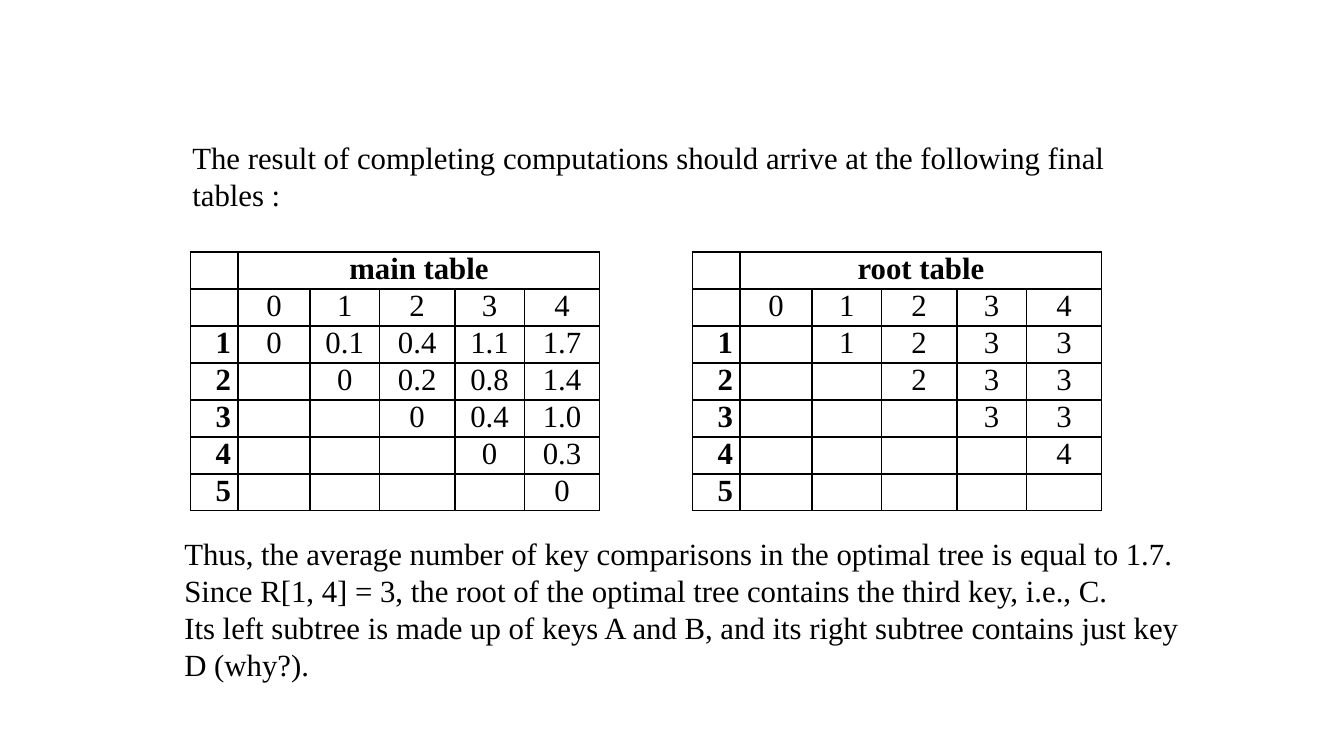
from dataclasses import dataclass

import lxml.etree
import pptx
import pptx.dml.color
import pptx.enum.text
import pptx.oxml
import pptx.oxml.ns
import pptx.util

Pt = pptx.util.Pt
ALIGN = pptx.enum.text.PP_ALIGN
BLACK, WHITE = "000000", "FFFFFF"
TEXT_FORMAT = {"name": "Times New Roman", "size": Pt(22)}
CELL_FORMAT = {
    "margin_left": Pt(5),
    "margin_right": Pt(5),
    "margin_top": Pt(0),
    "margin_bottom": Pt(0),
}
COLUMN_WIDTHS = (34, 51.5, 49.5, 54, 49.5, 54)
ROW_HEIGHT = 26.4
TABLE_TOP = 180
KEY_HEADINGS = ["0", "1", "2", "3", "4"]


@dataclass
class Passage:
    left: float
    top: float
    width: float
    height: float
    paragraphs: list[str]


@dataclass
class KeyTable:
    left: float
    title: str
    triangle: list[list[str]]


PASSAGES = [
    Passage(130.3, 95.8, 711.4, 60.5, [
        "The result of completing computations should arrive at the following final tables :",
    ]),
    Passage(124.6, 378.7, 740.9, 113.8, [
        "Thus, the average number of key comparisons in the optimal tree is equal to 1.7. "
        "Since R[1, 4] = 3, the root of the optimal tree contains the third key, i.e., C.",
        "Its left subtree is made up of keys A and B, and its right subtree contains "
        "just key D (why?).",
    ]),
]
KEY_TABLES = [
    KeyTable(136, "main table", [
        ["0", "0.1", "0.4", "1.1", "1.7"],
        ["0", "0.2", "0.8", "1.4"],
        ["0", "0.4", "1.0"],
        ["0", "0.3"],
        ["0"],
    ]),
    KeyTable(494.6, "root table", [
        ["1", "2", "3", "3"],
        ["2", "3", "3"],
        ["3", "3"],
        ["4"],
        [],
    ]),
]


def color(value: str) -> pptx.dml.color.RGBColor:
    return pptx.dml.color.RGBColor.from_string(value)


def apply_format(target, values: dict) -> None:
    for attribute, value in values.items():
        setattr(target, attribute, value)


def write(paragraph, text: str, bold: bool = False) -> None:
    run = paragraph.add_run()
    run.text = text
    apply_format(run.font, TEXT_FORMAT | {"bold": bold})
    run.font.color.rgb = color(BLACK)


def draw_borders(cell) -> None:
    properties = cell._tc.get_or_add_tcPr()
    for side in ("lnL", "lnR", "lnT", "lnB"):
        line = lxml.etree.SubElement(properties, pptx.oxml.ns.qn(f"a:{side}"), w=str(Pt(1)))
        fill = lxml.etree.SubElement(line, pptx.oxml.ns.qn("a:solidFill"))
        lxml.etree.SubElement(fill, pptx.oxml.ns.qn("a:srgbClr"), val=BLACK)


def draw_passage(slide, passage: Passage) -> None:
    box = slide.shapes.add_textbox(
        Pt(passage.left), Pt(passage.top), Pt(passage.width), Pt(passage.height)
    )
    frame = box.text_frame
    apply_format(frame, {
        "word_wrap": True,
        "auto_size": pptx.enum.text.MSO_AUTO_SIZE.SHAPE_TO_FIT_TEXT,
    })
    for index, text in enumerate(passage.paragraphs):
        write(frame.add_paragraph() if index else frame.paragraphs[0], text)


def table_rows(key_table: KeyTable) -> list[list[str]]:
    rows = [["", key_table.title, "", "", "", ""], ["", *KEY_HEADINGS]]
    for number, values in enumerate(key_table.triangle, 1):
        padding = [""] * (len(KEY_HEADINGS) - len(values))
        rows.append([str(number), *padding, *values])
    return rows


def draw_key_table(slide, key_table: KeyTable) -> None:
    rows = table_rows(key_table)
    grid = slide.shapes.add_table(
        len(rows), len(COLUMN_WIDTHS), Pt(key_table.left), Pt(TABLE_TOP),
        Pt(sum(COLUMN_WIDTHS)), Pt(ROW_HEIGHT * len(rows)),
    ).table
    apply_format(grid, {"first_row": False, "horz_banding": False})
    for column, width in zip(grid.columns, COLUMN_WIDTHS):
        column.width = Pt(width)
    for row in grid.rows:
        row.height = Pt(ROW_HEIGHT)
    grid.cell(0, 1).merge(grid.cell(0, len(COLUMN_WIDTHS) - 1))
    for row_index, values in enumerate(rows):
        for column_index, text in enumerate(values):
            cell = grid.cell(row_index, column_index)
            apply_format(cell, CELL_FORMAT)
            draw_borders(cell)
            cell.fill.solid()
            cell.fill.fore_color.rgb = color(WHITE)
            if text:
                paragraph = cell.text_frame.paragraphs[0]
                paragraph.alignment = ALIGN.CENTER if column_index else ALIGN.RIGHT
                write(paragraph, text, bold=row_index == 0 or column_index == 0)


def main() -> None:
    presentation = pptx.Presentation()
    apply_format(presentation, {"slide_width": Pt(960), "slide_height": Pt(540)})
    slide = presentation.slides.add_slide(presentation.slide_layouts[6])
    introduction, conclusion = PASSAGES
    draw_passage(slide, introduction)
    for key_table in KEY_TABLES:
        draw_key_table(slide, key_table)
    draw_passage(slide, conclusion)
    presentation.save("out.pptx")


if __name__ == "__main__":
    main()
